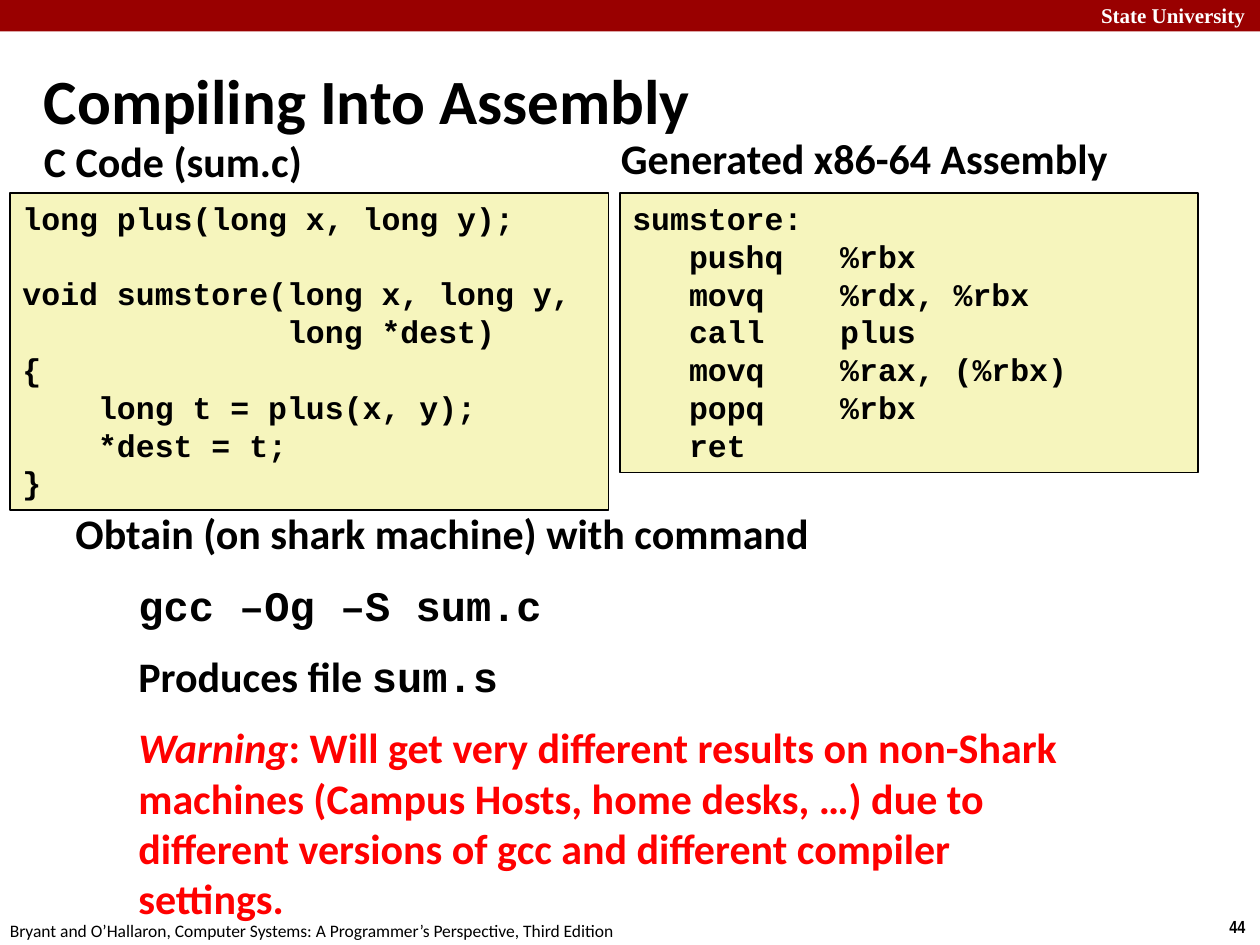
from dataclasses import dataclass
from lxml.etree import SubElement
from pptx import Presentation
from pptx.dml.color import RGBColor
from pptx.enum.shapes import MSO_SHAPE
from pptx.enum.text import MSO_ANCHOR
from pptx.oxml.ns import qn
from pptx.util import Inches, Pt

BLACK = RGBColor(0, 0, 0)
WHITE = RGBColor(255, 255, 255)
RED = RGBColor(255, 0, 0)
MAROON = RGBColor(0x99, 0, 0)
CREAM = RGBColor(0xF6, 0xF5, 0xBD)

SANS, MONO = "Calibri", "Courier New"
UNIT = 0.25  # inches; the slide is a grid of 40 columns by 30 rows
CHAR = 0.15  # inches; width of one 18 pt code letter


@dataclass
class Box:
    """A place on the grid, in columns and rows."""
    col: float
    row: float
    wide: float
    high: float

    def lengths(self) -> list:
        sides = (self.col, self.row, self.wide, self.high)
        return [Inches(side * UNIT) for side in sides]


@dataclass
class Style:
    size: float
    face: str = SANS
    color: RGBColor = BLACK
    bold: bool = True
    italic: bool = False


@dataclass
class Label:
    box: Box
    text: str
    style: Style
    wrap: bool = True
    anchor: MSO_ANCHOR = MSO_ANCHOR.TOP


@dataclass
class Code:
    """A listing whose tab stops are counted in letters."""
    box: Box
    stops: tuple
    lines: tuple


HEAD = Style(24)
CODE = Style(18, MONO)
SHELL = Style(24, MONO)
ALERT = Style(24, color=RED)

LABELS = (
    Label(Box(34.56, -0.12, 5.72, 1.2), "State University",
          Style(12, "Times New Roman", WHITE)),
    Label(Box(38.64, 28.88, 1.36, 1.08), "44",
          Style(10, "Arial Narrow"), wrap=False),
    Label(Box(-0.08, 29, 20.32, 1.08),
          "Bryant and O’Hallaron, Computer Systems: "
          "A Programmer’s Perspective, Third Edition",
          Style(10, bold=False), wrap=False),
    Label(Box(1, 1.92, 30, 2.44), "Compiling Into Assembly",
          Style(36), anchor=MSO_ANCHOR.MIDDLE),
    Label(Box(1, 4.12, 10.68, 1.6), "C Code (sum.c)", HEAD),
    Label(Box(19.32, 4, 18, 1.8), "Generated x86-64 Assembly", HEAD),
)

# An empty line stands for extra space above the next one.
CODES = (
    Code(Box(0.32, 6.12, 19, 10.08), (4, 14), (
        "long plus(long x, long y);",
        "",
        "void sumstore(long x, long y,",
        "\t\tlong *dest)",
        "{",
        "\tlong t = plus(x, y);",
        "\t*dest = t;",
        "}",
    )),
    Code(Box(19.68, 6.12, 18.36, 8.88), (3, 11), (
        "sumstore:",
        "\tpushq\t%rbx",
        "\tmovq\t%rdx, %rbx",
        "\tcall\tplus",
        "\tmovq\t%rax, (%rbx)",
        "\tpopq\t%rbx",
        "\tret",
    )),
)

NOTES = (
    (("Obtain (on shark machine) with command", HEAD),),
    (("gcc –Og –S sum.c", SHELL),),
    (("Produces file ", HEAD), ("sum.s", SHELL)),
    (("Warning", Style(24, color=RED, italic=True)),
     (": Will get very different results on non-Shark machines "
      "(Campus Hosts, home desks, …) due to different versions of gcc "
      "and different compiler settings.", ALERT)),
)


def paint(font, style: Style) -> None:
    font.name = style.face
    font.size = Pt(style.size)
    font.bold = style.bold
    font.italic = style.italic
    font.color.rgb = style.color


def add_box(slide, box: Box, wrap: bool = True):
    shape = slide.shapes.add_textbox(*box.lengths())
    shape.text_frame.word_wrap = wrap
    return shape


def next_par(frame, first: bool):
    return frame.paragraphs[0] if first else frame.add_paragraph()


def set_tabs(par, stops: tuple) -> None:
    tabs = SubElement(par._p.get_or_add_pPr(), qn("a:tabLst"))
    for stop in stops:
        SubElement(tabs, qn("a:tab"), pos=str(Inches(stop * CHAR)), algn="l")


def draw_band(slide) -> None:
    band = slide.shapes.add_shape(MSO_SHAPE.RECTANGLE,
                                  *Box(0, 0, 40, 1).lengths())
    band.shadow.inherit = False
    band.fill.solid()
    band.fill.fore_color.rgb = MAROON
    band.line.fill.background()


def draw_label(slide, label: Label) -> None:
    frame = add_box(slide, label.box, label.wrap).text_frame
    frame.vertical_anchor = label.anchor
    par = frame.paragraphs[0]
    par.add_run().text = label.text
    paint(par.font, label.style)


def draw_code(slide, code: Code) -> None:
    shape = add_box(slide, code.box)
    shape.fill.solid()
    shape.fill.fore_color.rgb = CREAM
    shape.line.color.rgb = BLACK
    shape.line.width = Pt(1)
    for i, line in enumerate(code.lines):
        if not line:
            continue
        par = next_par(shape.text_frame, i == 0)
        set_tabs(par, code.stops)
        if i and not code.lines[i - 1]:
            par.space_before = Pt(21.5)
        par.add_run().text = line
        paint(par.font, CODE)


def draw_notes(slide) -> None:
    frame = add_box(slide, Box(2, 15.92, 32.68, 14.92)).text_frame
    for i, parts in enumerate(NOTES):
        par = next_par(frame, i == 0)
        if i:
            par.level = 1
            par.space_before = Pt(12)
            props = par._p.get_or_add_pPr()
            props.set("marL", str(Inches(0.5)))
            props.set("indent", "0")
        for text, style in parts:
            run = par.add_run()
            run.text = text
            paint(par.font if len(parts) == 1 else run.font, style)


def main() -> None:
    deck = Presentation()
    deck.slide_width, deck.slide_height = Inches(40 * UNIT), Inches(30 * UNIT)
    slide = deck.slides.add_slide(deck.slide_layouts[6])
    draw_band(slide)
    for label in LABELS:
        draw_label(slide, label)
    for code in CODES:
        draw_code(slide, code)
    draw_notes(slide)
    deck.save("out.pptx")


if __name__ == "__main__":
    main()
